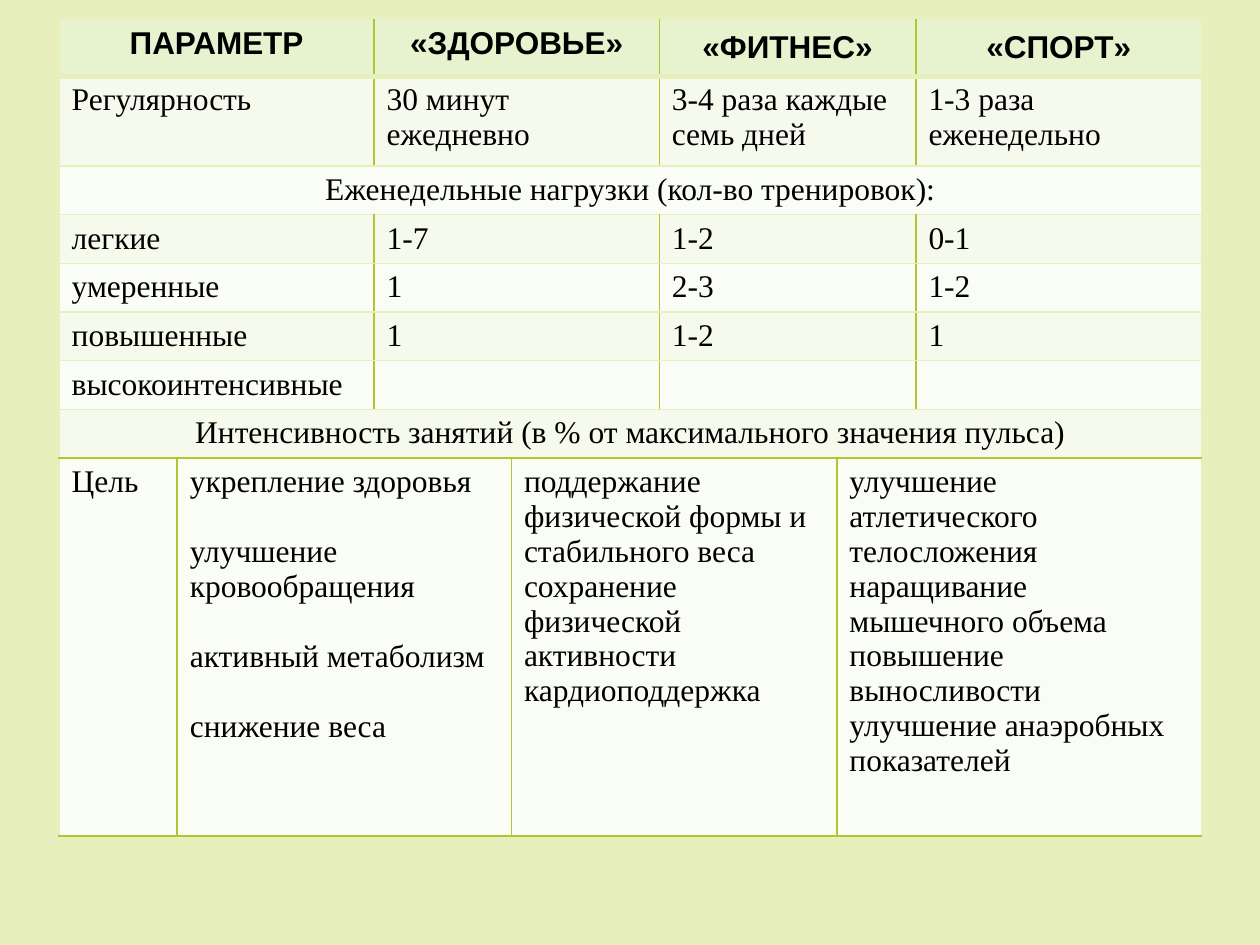
import pptx
import pptx.dml.color
import pptx.enum.text
import pptx.oxml
import pptx.oxml.ns
import pptx.util

Pt = pptx.util.Pt
CENTER = pptx.enum.text.PP_ALIGN.CENTER
LEFT = pptx.enum.text.PP_ALIGN.LEFT

# Content: each cell is a list of paragraphs
HEADERS = ["ПАРАМЕТР", "«ЗДОРОВЬЕ»", "«ФИТНЕС»", "«СПОРТ»"]
PARAMETERS = [
    ["Регулярность", "30 минут ежедневно", "3-4 раза каждые семь дней", "1-3 раза еженедельно"],
    ["Еженедельные нагрузки (кол-во тренировок):"],
    ["легкие", "1-7", "1-2", "0-1"],
    ["умеренные", "1", "2-3", "1-2"],
    ["повышенные", "1", "1-2", "1"],
    ["высокоинтенсивные", "", "", ""],
    ["Интенсивность занятий (в % от максимального значения пульса)"],
]
GOALS = [
    ["Цель"],
    ["укрепление здоровья", "улучшение кровообращения", "активный метаболизм", "снижение веса"],
    ["поддержание физической формы и стабильного веса",
     "сохранение физической активности", "кардиоподдержка"],
    ["улучшение атлетического телосложения", "наращивание мышечного объема",
     "повышение выносливости", "улучшение анаэробных показателей"],
]
ROWS = [[[text] for text in row] for row in [HEADERS] + PARAMETERS] + [GOALS]

# Layout
COLUMN_WIDTHS = [67.5, 112.5, 78.5, 84.5, 101.5, 45.2, 163.2]
ROW_HEIGHTS = [32.4, 51.2] + [27.85] * 6 + [216]
TABLE_LEFT, TABLE_TOP = 33.8, 11.2
HEADER_SPANS = [2, 2, 2, 1]
GOAL_SPANS = [1, 2, 2, 2]
LAST_ROW = len(ROWS) - 1
LAST_COLUMN = len(COLUMN_WIDTHS) - 1

THEME = {
    "background": "E7EFBD",
    "line": "B3C530",
    "header_fill": "E7F3CE",
    "band_fills": ["FAFDF6", "F6FAED"],
    "header_font": {"name": "Arial", "size": Pt(18), "bold": True},
    "body_font": {"name": "Times New Roman", "size": Pt(18), "bold": False},
    "text": "000000",
    "goal_gap": Pt(20),
}
HEADER_PADDING = {"margin_left": Pt(5.8), "margin_right": Pt(5.8),
                  "margin_top": Pt(5.8), "margin_bottom": Pt(5.8)}


def rgb(value):
    return pptx.dml.color.RGBColor.from_string(value)


def apply_format(target, values):
    for name, value in values.items():
        setattr(target, name, value)


def horizontal_border(boundary):
    """Colour and width of the line above row number `boundary`."""
    color = THEME["line"] if boundary >= LAST_ROW else THEME["background"]
    return color, 3 if boundary == 1 else 1


def vertical_border(boundary):
    """Colour and width of the line left of column number `boundary`."""
    outer = boundary in (0, LAST_COLUMN + 1)
    return THEME["background"] if outer else THEME["line"], 1


def set_borders(cell, borders):
    properties = cell._tc.get_or_add_tcPr()
    for side in "LRTB":
        if side in borders:
            color, width = borders[side]
            properties.append(pptx.oxml.parse_xml(
                f'<a:ln{side} {pptx.oxml.ns.nsdecls("a")} w="{Pt(width)}">'
                f'<a:solidFill><a:srgbClr val="{color}"/></a:solidFill></a:ln{side}>'))


def fill_text(cell, paragraphs, font_values, alignment, gap):
    frame = cell.text_frame
    for index, text in enumerate(paragraphs):
        paragraph = frame.add_paragraph() if index else frame.paragraphs[0]
        paragraph.alignment = alignment
        if index and gap:
            paragraph.space_before = gap
        run = paragraph.add_run()
        run.text = text
        apply_format(run.font, font_values)
        run.font.color.rgb = rgb(THEME["text"])


def spans_for(row_number):
    if row_number == LAST_ROW:
        return GOAL_SPANS
    return [LAST_COLUMN + 1] if len(ROWS[row_number]) == 1 else HEADER_SPANS


def build_row(table, row_number):
    is_header = row_number == 0
    spans = spans_for(row_number)
    fill = THEME["header_fill"] if is_header else THEME["band_fills"][row_number % 2]
    font_values = THEME["header_font" if is_header else "body_font"]
    alignment = CENTER if is_header or len(spans) == 1 else LEFT
    start = 0
    for position, (span, paragraphs) in enumerate(zip(spans, ROWS[row_number])):
        end = start + span
        cell = table.cell(row_number, start)
        if span > 1:
            cell.merge(table.cell(row_number, end - 1))
        # Borders and fill over the whole span
        for column in range(start, end):
            part = table.cell(row_number, column)
            borders = {"T": horizontal_border(row_number), "B": horizontal_border(row_number + 1)}
            if column == start:
                borders["L"] = vertical_border(start)
            if column in (start, end - 1):
                borders["R"] = vertical_border(end)
            set_borders(part, borders)
            part.fill.solid()
            part.fill.fore_color.rgb = rgb(fill)
        if is_header and position >= 2:
            apply_format(cell, HEADER_PADDING)
        gap = THEME["goal_gap"] if row_number == LAST_ROW and position == 1 else None
        fill_text(cell, paragraphs, font_values, alignment, gap)
        start = end


def main():
    presentation = pptx.Presentation()
    apply_format(presentation, {"slide_width": Pt(720), "slide_height": Pt(540)})
    slide = presentation.slides.add_slide(presentation.slide_layouts[6])
    slide.background.fill.solid()
    slide.background.fill.fore_color.rgb = rgb(THEME["background"])

    # Training table
    shape = slide.shapes.add_table(
        len(ROWS), len(COLUMN_WIDTHS), Pt(TABLE_LEFT), Pt(TABLE_TOP),
        Pt(sum(COLUMN_WIDTHS)), Pt(sum(ROW_HEIGHTS)))
    table = shape.table
    apply_format(table, {"first_row": False, "horz_banding": False})
    for column, width in zip(table.columns, COLUMN_WIDTHS):
        column.width = Pt(width)
    for row, height in zip(table.rows, ROW_HEIGHTS):
        row.height = Pt(height)
    for row_number in range(len(ROWS)):
        build_row(table, row_number)

    presentation.save("out.pptx")


if __name__ == "__main__":
    main()
